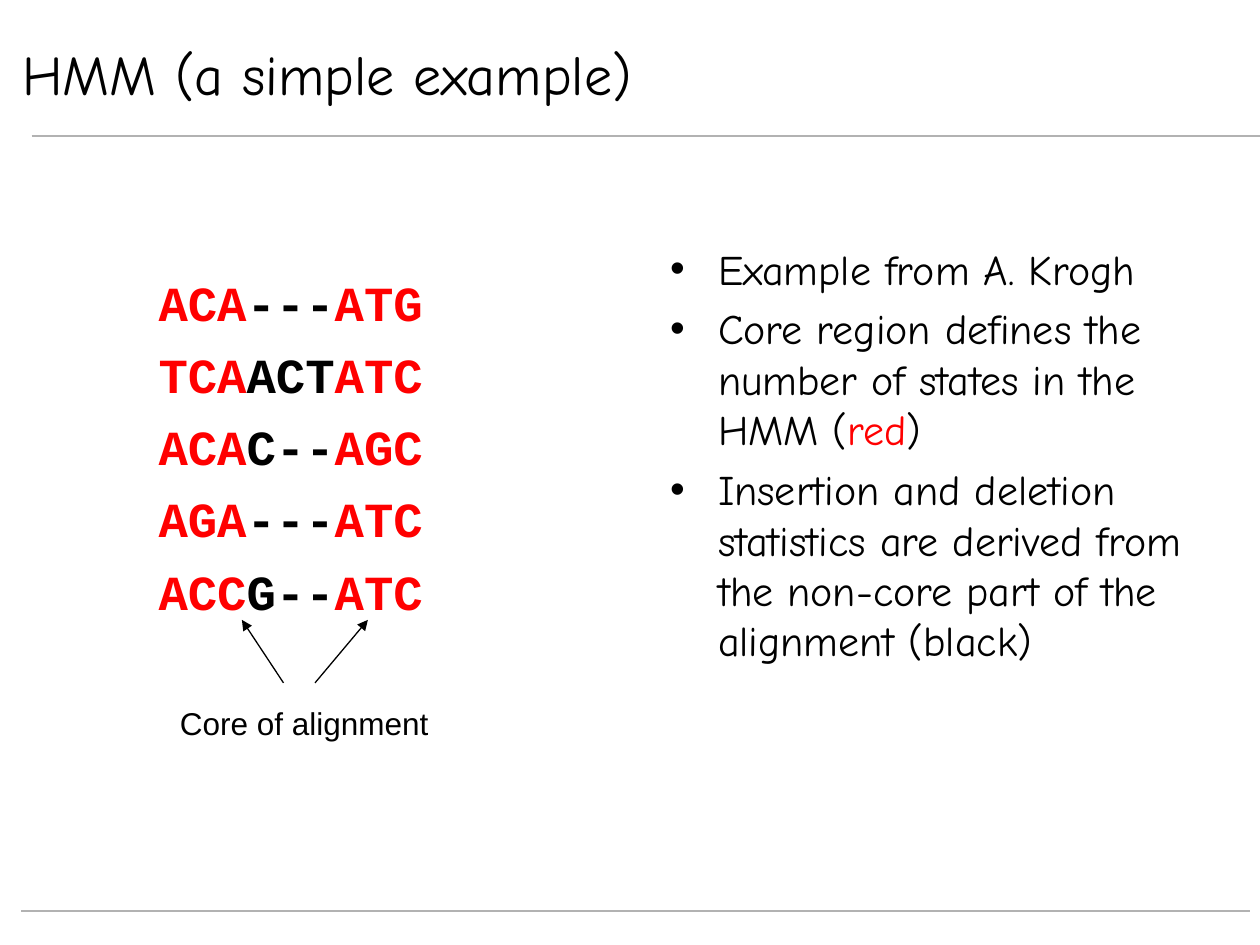
from lxml import etree
from pptx import Presentation
from pptx.dml.color import RGBColor
from pptx.enum import shapes, text
from pptx.oxml.ns import qn
from pptx.util import Inches, Pt

BLACK = RGBColor(0x00, 0x00, 0x00)
WHITE = RGBColor(0xFF, 0xFF, 0xFF)
RED = RGBColor(0xFF, 0x00, 0x00)
GRAY = RGBColor(0xB2, 0xB2, 0xB2)

ALIGNMENT = [
    ("ACA", "---", "ATG"),
    ("TCA", "ACT", "ATC"),
    ("ACA", "C--", "AGC"),
    ("AGA", "---", "ATC"),
    ("ACC", "G--", "ATC"),
]
NOTES = [
    [("Example from A. Krogh", BLACK)],
    [("Core region defines the number of states in the HMM (", BLACK),
     ("red", RED), (")", BLACK)],
    [("Insertion and deletion statistics are derived from the non-core "
      "part of the alignment (black)", BLACK)],
]


def add_line(page, start, end, color, width, arrow=False):
    line = page.shapes.add_connector(
        shapes.MSO_CONNECTOR.STRAIGHT, *map(Inches, start + end))
    line.line.color.rgb = color
    line.line.width = Pt(width)
    if arrow:
        etree.SubElement(line.line._get_or_add_ln(), qn("a:tailEnd"),
                         type="triangle")
    etree.SubElement(line._element.spPr, qn("a:effectLst"))


def add_bullet(para):
    properties = para._p.get_or_add_pPr()
    properties.set("marL", str(Inches(0.38)))
    properties.set("indent", str(-Inches(0.38)))
    etree.SubElement(properties, qn("a:buFont"), typeface="Arial")
    etree.SubElement(properties, qn("a:buChar"), char="•")


def add_text(page, place, paragraphs, font, size, bold=False,
             gap=0, bullets=False, wrap=True):
    """Add a text box; each paragraph is a list of (words, color) spans."""
    box = page.shapes.add_textbox(*map(Inches, place))
    frame = box.text_frame
    frame.word_wrap = wrap
    for index, spans in enumerate(paragraphs):
        para = frame.paragraphs[0] if index == 0 else frame.add_paragraph()
        if index and gap:
            para.space_before = Pt(gap)
        if bullets:
            add_bullet(para)
        for words, color in spans:
            span = para.add_run()
            span.text = words
            span.font.name = font
            span.font.size = Pt(size)
            span.font.bold = bold
            span.font.color.rgb = color
    return box


def add_title(page, words):
    box = add_text(page, (0.08, 0.33, 7.83, 0.5), [[(words, BLACK)]],
                   "Comic Neue", 32)
    box.text_frame.vertical_anchor = text.MSO_ANCHOR.MIDDLE
    box.fill.solid()
    box.fill.fore_color.rgb = WHITE
    box.line.color.rgb = WHITE
    box.line.width = Pt(0.75)


def main():
    deck = Presentation()
    deck.slide_width, deck.slide_height = Inches(10), Inches(7.5)
    page = deck.slides.add_slide(deck.slide_layouts[6])

    # Rules and title
    add_line(page, (0.25, 1.08), (10, 1.08), GRAY, 1.5)
    add_line(page, (0.17, 7.23), (9.92, 7.23), GRAY, 1.5)
    add_title(page, "HMM (a simple example)")

    # Sequences: red core around a black insertion region
    rows = [list(zip(row, (RED, BLACK, RED))) for row in ALIGNMENT]
    add_text(page, (1.16, 2.11, 2.89, 3.6), rows, "Courier New", 28,
             bold=True, gap=7.7)

    # Explanation
    add_text(page, (5.22, 1.88, 4.62, 4.12), NOTES, "Comic Neue", 24,
             gap=5.4, bullets=True)

    # Arrows from the label to both core parts
    add_line(page, (2.25, 5.42), (1.92, 4.92), BLACK, 0.75, arrow=True)
    add_line(page, (2.5, 5.42), (2.92, 4.92), BLACK, 0.75, arrow=True)
    label = add_text(page, (1.33, 5.54, 2.18, 0.4),
                     [[("Core of alignment", BLACK)]], "Arial", 18, wrap=False)
    label.text_frame.auto_size = text.MSO_AUTO_SIZE.SHAPE_TO_FIT_TEXT

    deck.save("out.pptx")


if __name__ == "__main__":
    main()
